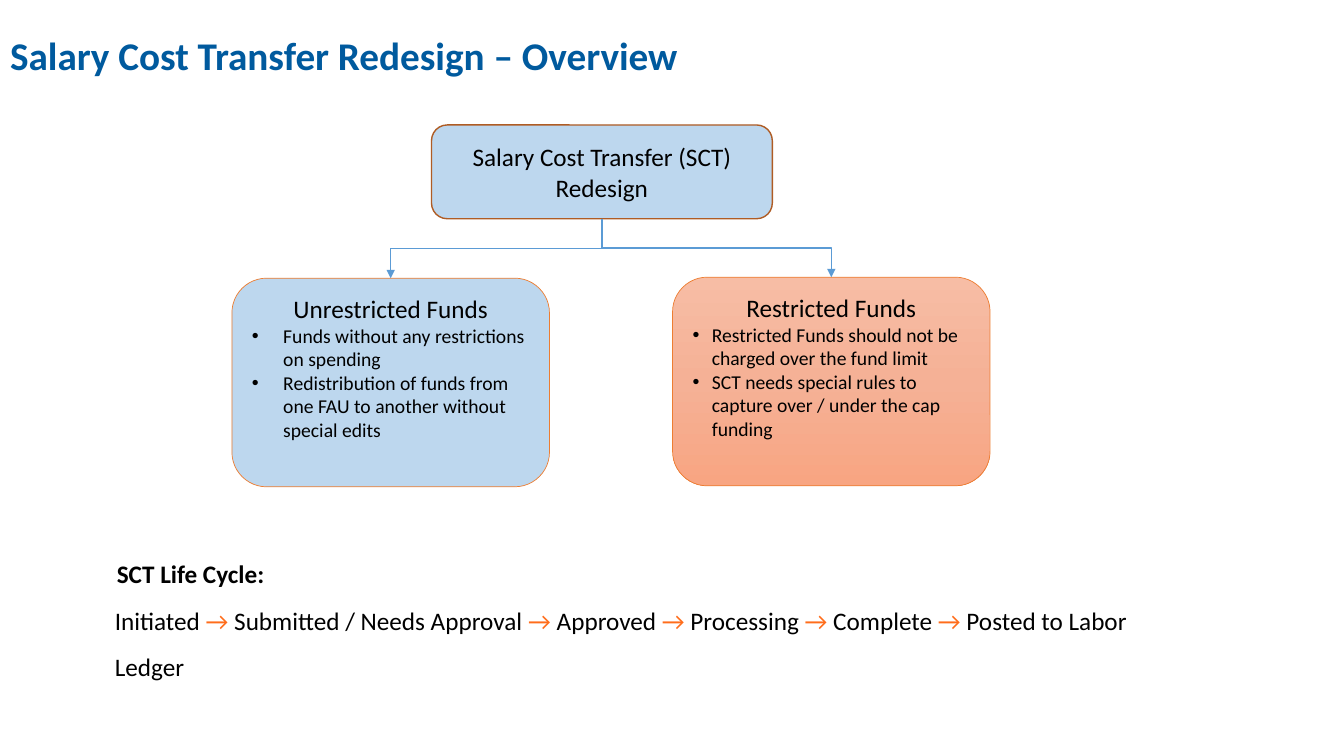
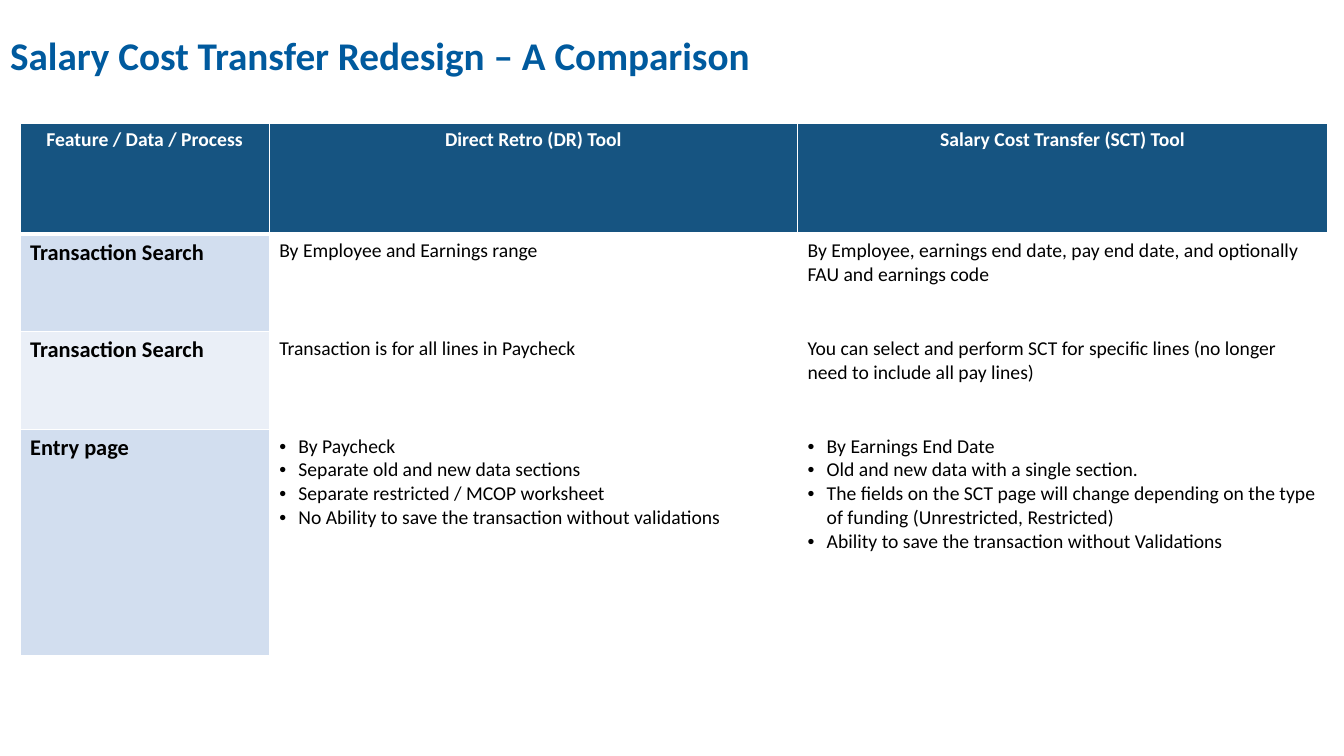
import copy
from dataclasses import dataclass

import lxml.etree
import pptx
import pptx.dml.color
import pptx.enum.shapes
import pptx.enum.text
import pptx.oxml.ns
import pptx.util

Inches = pptx.util.Inches
Pt = pptx.util.Pt
qn = pptx.oxml.ns.qn
Align = pptx.enum.text.PP_ALIGN
Anchor = pptx.enum.text.MSO_ANCHOR

FONT = "Calibri"
TITLE_BLUE = "005A9E"
LIGHT_BLUE = "BDD7EE"
CONNECTOR_BLUE = "5B9BD5"
ORANGE = "ED7D31"
BROWN = "AF5C24"
ARROW_ORANGE = "FF6D1B"
HEADER_BLUE = "165481"
BAND_COLORS = ("D2DEEF", "EAEFF7")
BLACK = "000000"
WHITE = "FFFFFF"
FUND_GRADIENT = ((0, "F7BDA5"), (50, "F5B196"), (100, "F8A582"))

COLUMN_WIDTHS = (2.47, 5.24, 5.26)
ROW_HEIGHTS = (1.1, 0.97, 0.97, 2.24)
CELL_BULLET_INDENT = 0.19


@dataclass(frozen=True)
class FlowBox:
    heading: str
    left: float
    top: float
    width: float
    height: float
    line_color: str = ORANGE
    line_width: float = 0.5
    gradient: tuple[tuple[int, str], ...] = ()
    bullets: tuple[str, ...] = ()
    bullet_indent: float = 0.0


@dataclass(frozen=True)
class FeatureRow:
    feature: str
    direct_retro: tuple[str, ...]
    cost_transfer: tuple[str, ...]


ROOT_BOX = FlowBox("Salary Cost Transfer (SCT) Redesign", 4.28, 1.24, 3.38, 0.93,
                   line_color=BROWN, line_width=1)
FUND_BOXES = (
    FlowBox("Unrestricted Funds", 2.3, 2.76, 3.15, 2.07, bullet_indent=0.31, bullets=(
        "Funds without any restrictions on spending",
        "Redistribution of funds from one FAU to another without special edits")),
    FlowBox("Restricted Funds", 6.67, 2.75, 3.15, 2.07, bullet_indent=0.19,
            gradient=FUND_GRADIENT, bullets=(
                "Restricted Funds should not be charged over the fund limit",
                "SCT needs special rules to capture over / under the cap funding")),
)
LIFE_CYCLE = ("Initiated", "Submitted / Needs Approval", "Approved", "Processing",
              "Complete", "Posted to Labor Ledger")

HEADERS = ("Feature / Data / Process", "Direct Retro (DR) Tool",
           "Salary Cost Transfer (SCT) Tool")
FEATURE_ROWS = (
    FeatureRow("Transaction Search", ("By Employee and Earnings range",),
               ("By Employee, earnings end date, pay end date, and optionally FAU "
                "and earnings code",)),
    FeatureRow("Transaction Search", ("Transaction is for all lines in Paycheck",),
               ("You can select and perform SCT for specific lines (no longer need to "
                "include all pay lines)",)),
    FeatureRow("Entry page",
               ("By Paycheck", "Separate old and new data sections",
                "Separate restricted / MCOP worksheet",
                "No Ability to save the transaction without validations"),
               ("By Earnings End Date", "Old and new data with a single section.",
                "The fields on the SCT page will change depending on the type of funding "
                "(Unrestricted, Restricted)",
                "Ability to save the transaction without Validations")),
)


def rgb(color: str) -> pptx.dml.color.RGBColor:
    return pptx.dml.color.RGBColor.from_string(color)


def write_text(text_frame, text: str, *, size: float = 18, color: str = BLACK,
               bold: bool = False, align=Align.LEFT, indent: float = 0,
               bulleted: bool = False, line_spacing: float | None = None,
               arrow_color: str | None = None) -> None:
    """Fill the first empty paragraph or add one; arrows may have their own colour."""
    paragraph = text_frame.paragraphs[-1]
    if paragraph.runs:
        paragraph = text_frame.add_paragraph()
    paragraph.alignment = align
    if line_spacing:
        paragraph.line_spacing = line_spacing
    properties = paragraph._p.get_or_add_pPr()
    if indent:
        properties.set("marL", str(Inches(indent)))
        properties.set("indent", str(-Inches(indent) if bulleted else 0))
    if bulleted:
        lxml.etree.SubElement(properties, qn("a:buFont")).set("typeface", "Arial")
        lxml.etree.SubElement(properties, qn("a:buChar")).set("char", "•")

    pieces = text.replace("→", "\t→\t").split("\t") if arrow_color else [text]
    for piece in pieces:
        run = paragraph.add_run()
        run.text = piece
        run.font.name = FONT
        run.font.size = Pt(size)
        run.font.bold = bold
        run.font.color.rgb = rgb(arrow_color if piece == "→" else color)


def add_titled_slide(presentation, title: str):
    slide = presentation.slides.add_slide(presentation.slide_layouts[5])
    shape = slide.shapes.title
    shape.left, shape.top = Inches(0), Inches(0.29)
    shape.width, shape.height = Inches(9.2), Inches(0.57)
    shape.text_frame.auto_size = pptx.enum.text.MSO_AUTO_SIZE.NONE
    shape.text_frame.vertical_anchor = Anchor.MIDDLE
    write_text(shape.text_frame, title, size=28, color=TITLE_BLUE, bold=True,
               line_spacing=0.9)
    return slide


def add_text_box(slide, left: float, top: float, width: float, height: float,
                 text: str, **text_format) -> None:
    shape = slide.shapes.add_textbox(Inches(left), Inches(top), Inches(width),
                                     Inches(height))
    shape.text_frame.word_wrap = True
    write_text(shape.text_frame, text, **text_format)


def fill_gradient(shape, stops: tuple[tuple[int, str], ...]) -> None:
    """Fill from top to bottom with three stops."""
    shape.fill.gradient()
    shape.fill.gradient_angle = 270
    stop_list = shape.element.spPr.find(".//" + qn("a:gsLst"))
    stop_list.insert(1, copy.deepcopy(stop_list[0]))
    for stop, (position, color) in zip(shape.fill.gradient_stops, stops):
        stop.position = position / 100
        stop.color.rgb = rgb(color)


def add_flow_box(slide, box: FlowBox):
    shape = slide.shapes.add_shape(
        pptx.enum.shapes.MSO_SHAPE.FLOWCHART_ALTERNATE_PROCESS,
        Inches(box.left), Inches(box.top), Inches(box.width), Inches(box.height))
    shape.shadow.inherit = False
    if box.gradient:
        fill_gradient(shape, box.gradient)
    else:
        shape.fill.solid()
        shape.fill.fore_color.rgb = rgb(LIGHT_BLUE)
    shape.line.color.rgb = rgb(box.line_color)
    shape.line.width = Pt(box.line_width)
    text_frame = shape.text_frame
    text_frame.word_wrap = True
    text_frame.vertical_anchor = Anchor.TOP if box.bullets else Anchor.MIDDLE
    write_text(text_frame, box.heading, align=Align.CENTER)
    for bullet in box.bullets:
        write_text(text_frame, bullet, size=14, indent=box.bullet_indent, bulleted=True)
    return shape


def add_branch(slide, parent, child) -> None:
    """Draw an elbow arrow that leaves the parent downwards and enters the child's top."""
    start_x, start_y = parent.left + parent.width // 2, parent.top + parent.height
    end_x, end_y = child.left + child.width // 2, child.top
    connector = slide.shapes.add_connector(pptx.enum.shapes.MSO_CONNECTOR.ELBOW,
                                           start_x, start_y, end_x, end_y)
    connector.begin_connect(parent, 2)
    connector.end_connect(child, 0)

    # A quarter turn makes the first leg vertical.
    drop, span = end_y - start_y, abs(end_x - start_x)
    connector.left = (start_x + end_x - drop) // 2
    connector.top = (start_y + end_y - span) // 2
    connector.width, connector.height = drop, span
    goes_right = end_x > start_x
    properties = connector.element.spPr
    transform = properties.find(qn("a:xfrm"))
    transform.set("rot", str((270 if goes_right else 90) * 60000))
    transform.set("flipH", "1" if goes_right else "0")

    connector.line.color.rgb = rgb(CONNECTOR_BLUE)
    connector.line.width = Pt(1)
    line = properties.find(qn("a:ln"))
    lxml.etree.SubElement(line, qn("a:tailEnd")).set("type", "triangle")
    lxml.etree.SubElement(properties, qn("a:effectLst"))


def format_cell(cell, fill: str, bottom_width: float = 1) -> None:
    cell.fill.solid()
    cell.fill.fore_color.rgb = rgb(fill)
    properties = cell._tc.get_or_add_tcPr()
    for index, side in enumerate("LRTB"):
        width = bottom_width if side == "B" else 1
        border = lxml.etree.Element(qn(f"a:ln{side}"), w=str(Pt(width)))
        solid = lxml.etree.SubElement(border, qn("a:solidFill"))
        lxml.etree.SubElement(solid, qn("a:srgbClr")).set("val", WHITE)
        properties.insert(index, border)


def add_comparison_table(slide) -> None:
    table = slide.shapes.add_table(
        len(ROW_HEIGHTS), len(COLUMN_WIDTHS), Inches(0.2), Inches(1.22),
        Inches(sum(COLUMN_WIDTHS)), Inches(sum(ROW_HEIGHTS))).table
    for column, width in zip(table.columns, COLUMN_WIDTHS):
        column.width = Inches(width)
    for row, height in zip(table.rows, ROW_HEIGHTS):
        row.height = Inches(height)

    for column_index, header in enumerate(HEADERS):
        cell = table.cell(0, column_index)
        format_cell(cell, HEADER_BLUE, bottom_width=3)
        write_text(cell.text_frame, header, size=14, color=WHITE, bold=True,
                   align=Align.CENTER)
    for row_index, row in enumerate(FEATURE_ROWS, start=1):
        feature_cell = table.cell(row_index, 0)
        format_cell(feature_cell, BAND_COLORS[(row_index - 1) % 2])
        write_text(feature_cell.text_frame, row.feature, size=16, bold=True)
        for column_index, lines in enumerate((row.direct_retro, row.cost_transfer), start=1):
            cell = table.cell(row_index, column_index)
            format_cell(cell, WHITE)
            bulleted = len(lines) > 1
            for line in lines:
                write_text(cell.text_frame, line, size=14, bulleted=bulleted,
                           indent=CELL_BULLET_INDENT if bulleted else 0)


def build_overview(presentation) -> None:
    slide = add_titled_slide(presentation, "Salary Cost Transfer Redesign – Overview")
    root = add_flow_box(slide, ROOT_BOX)
    for box in FUND_BOXES:
        add_branch(slide, root, add_flow_box(slide, box))
    add_text_box(slide, 0.54, 5.81, 11.31, 0.96, " → ".join(LIFE_CYCLE), indent=0.5,
                 line_spacing=1.5, arrow_color=ARROW_ORANGE)
    add_text_box(slide, 1.06, 5.49, 8.55, 0.4, "SCT Life Cycle:", bold=True)


def build_comparison(presentation) -> None:
    slide = add_titled_slide(presentation, "Salary Cost Transfer Redesign – A Comparison")
    add_comparison_table(slide)


def main() -> None:
    presentation = pptx.Presentation()
    presentation.slide_width = Inches(13.33)
    presentation.slide_height = Inches(7.5)
    build_overview(presentation)
    build_comparison(presentation)
    presentation.save("out.pptx")


if __name__ == "__main__":
    main()
